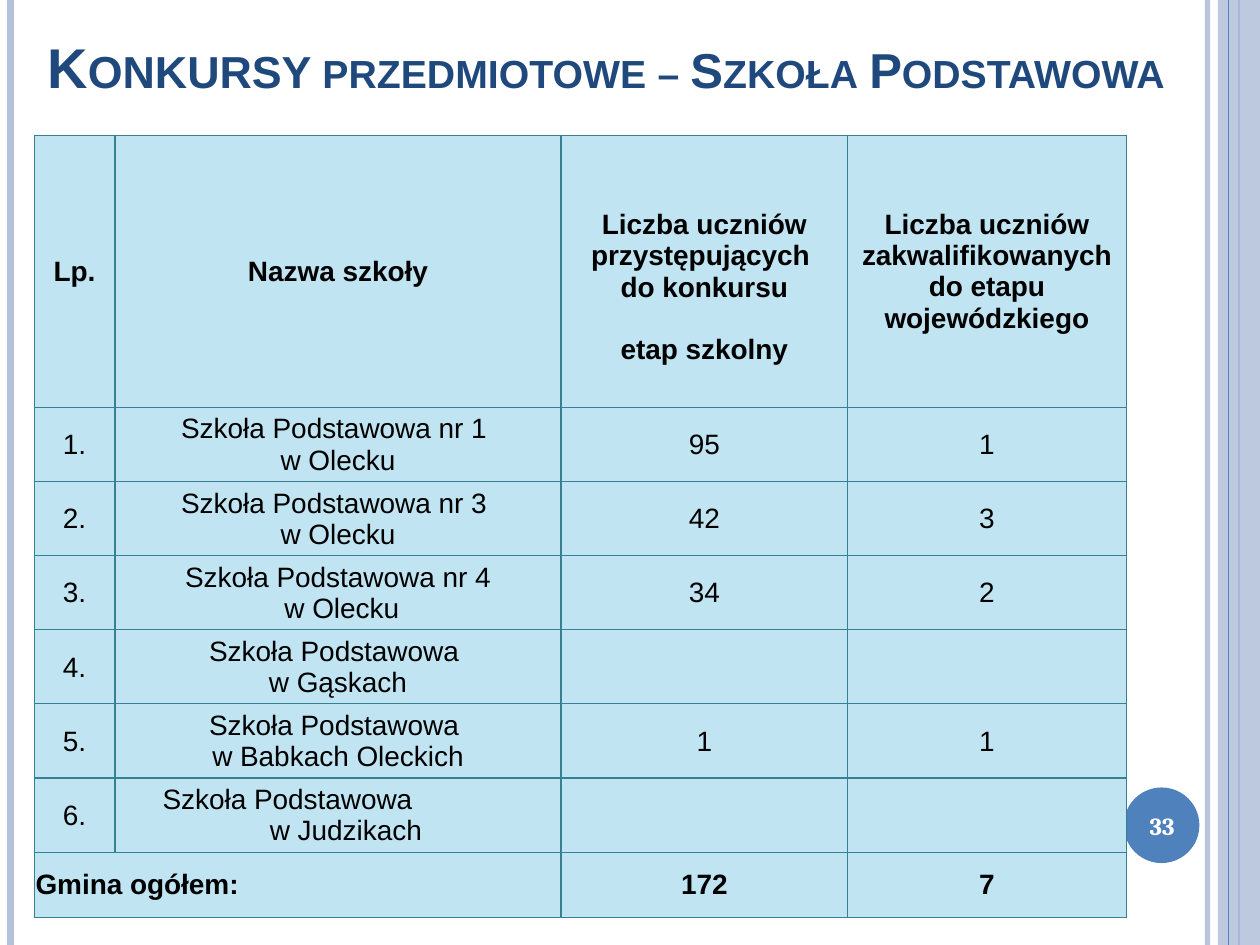
from pptx import Presentation
from pptx.dml.color import RGBColor
from pptx.enum.shapes import MSO_CONNECTOR as Connector, MSO_SHAPE as Shape
from pptx.enum.text import MSO_ANCHOR as Anchor, PP_ALIGN as Align
from pptx.oxml.ns import qn
from pptx.util import Pt
from lxml.etree import SubElement

PAGE_WIDTH, PAGE_HEIGHT = 720, 540


def color(value):
    return RGBColor.from_string(value)


class SlideBuilder:
    font = "Arial"
    pale, blue, navy = "B3C1DB", "4F81BD", "1F497D"
    cell_fill, border, ink = "C0E4F2", "368094", "000000"

    def __init__(self, page):
        self.page = page

    def set_alpha(self, element, percent):
        for tint in element.iter(qn("a:srgbClr")):
            SubElement(tint, qn("a:alpha"), val=str(percent * 1000))

    def stripe(self, x, width, tone, alpha=100):
        line = self.page.shapes.add_connector(
            Connector.STRAIGHT, Pt(x), Pt(0), Pt(x), Pt(PAGE_HEIGHT))
        line.line.color.rgb = color(tone)
        line.line.width = Pt(width)
        if alpha < 100:
            self.set_alpha(line._element.spPr, alpha)
        SubElement(line._element.spPr, qn("a:effectLst"))

    def shape(self, kind, x, y, width, height, tone, alpha=100):
        shape = self.page.shapes.add_shape(kind, Pt(x), Pt(y), Pt(width), Pt(height))
        shape.shadow.inherit = False
        shape.fill.solid()
        shape.fill.fore_color.rgb = color(tone)
        shape.line.fill.background()
        if alpha < 100:
            self.set_alpha(shape._element.spPr, alpha)

    def style(self, font, size, tone, bold, name=None):
        font.name = name or self.font
        font.size = Pt(size)
        font.bold = bold
        font.color.rgb = color(tone)

    def text_box(self, x, y, width, height, anchor):
        box = self.page.shapes.add_textbox(Pt(x), Pt(y), Pt(width), Pt(height))
        box.text_frame.word_wrap = True
        box.text_frame.vertical_anchor = anchor
        return box.text_frame.paragraphs[0]

    def title(self, x, y, width, height, parts):
        para = self.text_box(x, y, width, height, Anchor.BOTTOM)
        for text, size in parts:
            span = para.add_run()
            span.text = text
            self.style(span.font, size, self.navy, True)
            span.font._element.set("cap", "small")

    def page_number(self, x, y, width, height, text):
        para = self.text_box(x, y, width, height, Anchor.MIDDLE)
        para.text = text
        para.alignment = Align.CENTER
        self.style(para.font, 14, "FFFFFF", True, "Cambria")

    def table(self, x, y, columns, heights, rows):
        table = self.page.shapes.add_table(
            len(heights), len(columns), Pt(x), Pt(y),
            Pt(sum(columns)), Pt(sum(heights))).table
        table.first_row = table.horz_banding = False
        for column, width in zip(table.columns, columns):
            column.width = Pt(width)
        for row, height in zip(table.rows, heights):
            row.height = Pt(height)
        for r, texts in enumerate(rows):
            for c, text in enumerate(texts):
                self.cell(table.cell(r, c), text, r in (0, len(rows) - 1))
        return table

    def cell(self, cell, text, bold):
        cell.margin_left = cell.margin_right = cell.margin_top = Pt(0.72)
        cell.margin_bottom = Pt(0)
        cell.vertical_anchor = Anchor.MIDDLE
        cell.text = text
        for para in cell.text_frame.paragraphs:
            para.alignment = Align.CENTER
            self.style(para.font, 16, self.ink, bold)
        properties = cell._tc.get_or_add_tcPr()
        for side in ("lnL", "lnR", "lnT", "lnB"):
            edge = SubElement(properties, qn(f"a:{side}"), w=str(Pt(0.75)))
            fill = SubElement(edge, qn("a:solidFill"))
            SubElement(fill, qn("a:srgbClr"), val=self.border)
        cell.fill.solid()
        cell.fill.fore_color.rgb = color(self.cell_fill)

    def indent(self, para, left):
        para._p.get_or_add_pPr().set("marL", str(Pt(left)))


def main():
    deck = Presentation()
    deck.slide_width, deck.slide_height = Pt(PAGE_WIDTH), Pt(PAGE_HEIGHT)
    slide = SlideBuilder(deck.slides.add_slide(deck.slide_layouts[6]))

    slide.stripe(690, 3, slide.pale, 93)
    slide.stripe(6, 4.5, slide.pale)
    slide.stripe(708, 1.5, slide.blue)
    slide.shape(Shape.RECTANGLE, 696, 0, 24, PAGE_HEIGHT, slide.pale, 87)
    slide.stripe(702, 0.75, slide.blue)
    slide.shape(Shape.OVAL, 642.2, 450, 43.2, 43.2, slide.blue)

    slide.title(20, 9.4, 680.4, 51, [
        ("Konkursy", 32), (" przedmiotowe – Szkoła Podstawowa", 28)])
    slide.page_number(640, 451.4, 48.2, 41, "33")

    schools = [
        ("Szkoła Podstawowa nr 1 \nw Olecku", "95", "1"),
        ("Szkoła Podstawowa nr 3 \nw Olecku", "42", "3"),
        ("Szkoła Podstawowa nr 4\n w Olecku", "34", "2"),
        ("Szkoła Podstawowa \nw Gąskach", "", ""),
        ("Szkoła Podstawowa \nw Babkach Oleckich", "1", "1"),
        ("Szkoła Podstawowa\nw Judzikach", "", ""),
    ]
    header = (
        "Lp.", "Nazwa szkoły",
        "Liczba uczniów przystępujących \ndo konkursu\netap szkolny",
        "Liczba uczniów zakwalifikowanych do etapu wojewódzkiego")
    rows = [header]
    rows += [(f"{n}.", *school) for n, school in enumerate(schools, 1)]
    rows.append(("Gmina ogółem:", "", "172", "7"))
    heights = [155.5] + [42.4] * len(schools) + [37.2]
    table = slide.table(19.6, 77.2, [46.1, 254.9, 163.8, 159.2], heights, rows)

    stages = table.cell(0, 2)
    stages.margin_top = Pt(18.5)
    stages.text_frame.paragraphs[2].space_before = Pt(17.7)

    total = table.cell(len(rows) - 1, 0)
    total.merge(table.cell(len(rows) - 1, 1))
    total.text_frame.paragraphs[0].alignment = Align.LEFT

    name, place = table.cell(len(schools), 1).text_frame.paragraphs
    name.alignment = Align.LEFT
    slide.indent(name, 26.5)
    slide.indent(place, 9)

    deck.save("out.pptx")


if __name__ == "__main__":
    main()
